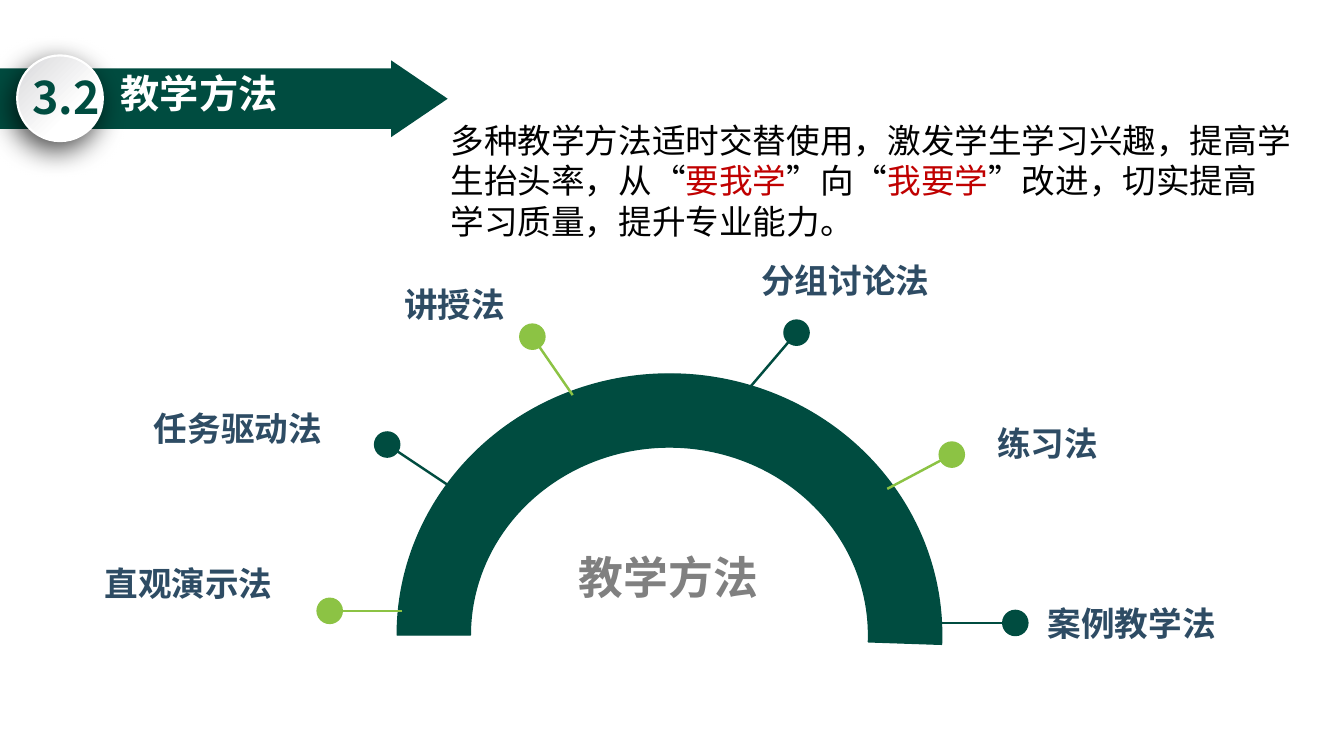
from dataclasses import dataclass

from lxml import etree
from pptx import Presentation
from pptx.dml.color import RGBColor
from pptx.enum.shapes import MSO_CONNECTOR as CONN, MSO_SHAPE as SHAPE
from pptx.enum.text import MSO_AUTO_SIZE as FIT, PP_ALIGN as ALIGN
from pptx.oxml import parse_xml
from pptx.oxml.ns import nsdecls, qn
from pptx.util import Inches, Pt


@dataclass(frozen=True)
class Theme:
    green: str = "004C40"
    lime: str = "8CC344"
    navy: str = "2E4C64"
    grey: str = "808080"
    red: str = "C00000"
    black: str = "000000"
    white: str = "FFFFFF"
    cjk: str = "Noto Sans CJK SC"
    latin: str = "Arial"
    body: int = 24
    title: int = 28
    large: int = 32


T = Theme()


def rgb(color):
    return RGBColor.from_string(color)


def add_solid(shapes, kind, box, color, line=None):
    sp = shapes.add_shape(kind, *map(Inches, box))
    sp.shadow.inherit = False
    sp.fill.solid()
    sp.fill.fore_color.rgb = rgb(color)
    if line:
        sp.line.color.rgb = rgb(color)
        sp.line.width = Pt(line)
    else:
        sp.line.fill.background()
    return sp


def add_line(shapes, start, end, color):
    cn = shapes.add_connector(CONN.STRAIGHT, *map(Inches, (*start, *end)))
    cn.line.color.rgb = rgb(color)
    cn.line.width = Pt(1.75)
    etree.SubElement(cn._element.spPr, qn("a:effectLst"))


def add_text(shapes, box, runs, size, bold=True, font=T.cjk,
             align=ALIGN.LEFT, wrap=True):
    """Place one paragraph; runs are (text, color) pairs."""
    tf = shapes.add_textbox(*map(Inches, box)).text_frame
    tf.word_wrap = wrap
    tf.auto_size = FIT.NONE
    p = tf.paragraphs[0]
    p.alignment = align
    for text, color in runs:
        r = p.add_run()
        r.text = text
        r.font.size, r.font.bold, r.font.name = Pt(size), bold, font
        r.font.color.rgb = rgb(color)
        ea = etree.SubElement(r._r.get_or_add_rPr(), qn("a:ea"))
        ea.set("typeface", T.cjk)


def style_badge(sp):
    """Give the badge its radial gradient and soft shadow."""
    sp.line.color.rgb = rgb(T.white)
    sp.line.width = Pt(1.5)
    spPr = sp._element.spPr
    spPr.replace(spPr.find(qn("a:solidFill")), parse_xml(
        f'<a:gradFill {nsdecls("a")} rotWithShape="1"><a:gsLst>'
        '<a:gs pos="34000"><a:srgbClr val="FFFFFF"/></a:gs>'
        '<a:gs pos="96000"><a:srgbClr val="DBDBDD"/></a:gs></a:gsLst>'
        '<a:path path="circle"><a:fillToRect l="100000" t="100000"/></a:path>'
        '</a:gradFill>'))
    spPr.find(qn("a:effectLst")).append(parse_xml(
        f'<a:outerShdw {nsdecls("a")} blurRad="{Pt(20)}" dist="{Pt(7)}" '
        'dir="7200000" algn="ctr" rotWithShape="0"><a:srgbClr val="000000">'
        '<a:alpha val="70000"/></a:srgbClr></a:outerShdw>'))


def header(slide, x, y):
    # Arrow banner
    banner = slide.shapes.add_group_shape().shapes
    add_solid(banner, SHAPE.RECTANGLE, (x, y + 0.13, 3.89, 0.6), T.green)
    tip = add_solid(banner, SHAPE.ISOSCELES_TRIANGLE,
                    (x + 3.78, y + 0.15, 0.76, 0.56), T.green)
    tip.rotation = 90
    add_text(slide.shapes, (x + 1.1, y + 0.09, 7.76, 0.87),
             [("教学方法", T.white)], T.title)
    # Numbered badge
    style_badge(add_solid(slide.shapes, SHAPE.OVAL,
                          (x + 0.17, y, 0.85, 0.85), T.white))
    add_text(slide.shapes, (x + 0.22, y + 0.09, 0.88, 0.64),
             [("3.2", T.green)], T.large, wrap=False)


def intro(slide, box):
    runs = [("多种教学方法适时交替使用，激发学生学习兴趣，提高学生抬头率，从“", T.black),
            ("要我学", T.red), ("”向“", T.black), ("我要学", T.red),
            ("”改进，切实提高学习质量，提升专业能力。", T.black)]
    add_text(slide.shapes, box, runs, T.body, bold=False)


# Label, label box (left, top, width), spoke root, dot centre: all from the arc's corner
METHODS = [
    ("案例教学法", (6.12, 2.22, 2.33), (5.4, 2.47), (6.13, 2.47)),
    ("练习法", (5.84, 0.44, 1.22), (4.86, 1.14), (5.5, 0.8)),
    ("分组讨论法", (3.23, -1.18, 2.43), (3.5, 0.13), (3.96, -0.41)),
    ("讲授法", (-0.52, -0.94, 2.18), (1.74, 0.21), (1.34, -0.37)),
    ("任务驱动法", (-2.67, 0.29, 2.18), (0.5, 1.1), (-0.1, 0.7)),
    ("直观演示法", (-3.16, 1.83, 2.18), (0.05, 2.35), (-0.67, 2.35)),
]


def methods_arc(slide, x, y, w, h):
    # Arc
    diagram = slide.shapes.add_group_shape().shapes
    arc = add_solid(diagram, SHAPE.BLOCK_ARC, (x, y, w, h), T.green, 1)
    for i, value in enumerate((108, 1.18, 0.14)):
        arc.adjustments[i] = value
    # Spokes with dots, colours alternating
    d = 0.25
    for i, (name, (lx, ly, lw), root, dot) in enumerate(METHODS):
        color = T.lime if i % 2 else T.green
        cx, cy = x + dot[0], y + dot[1]
        add_line(diagram, (x + root[0], y + root[1]), (cx, cy), color)
        add_solid(diagram, SHAPE.OVAL, (cx - d / 2, cy - d / 2, d, d), color, 1)
        add_text(slide.shapes, (x + lx, y + ly, lw, 0.5), [(name, T.navy)],
                 T.body, font=T.latin, align=ALIGN.CENTER)
    # Centre caption
    add_text(slide.shapes, (x + 1.7, y + 1.69, 2, 0.64),
             [("教学方法", T.grey)], T.large, wrap=False)


def main():
    prs = Presentation()
    prs.slide_width, prs.slide_height = Inches(13.33), Inches(7.5)
    slide = prs.slides.add_slide(prs.slide_layouts[6])
    header(slide, 0, 0.55)
    methods_arc(slide, 3.94, 3.71, 5.4, 5.18)
    intro(slide, (4.37, 1.14, 8.53, 1.31))
    prs.save("out.pptx")


if __name__ == "__main__":
    main()
